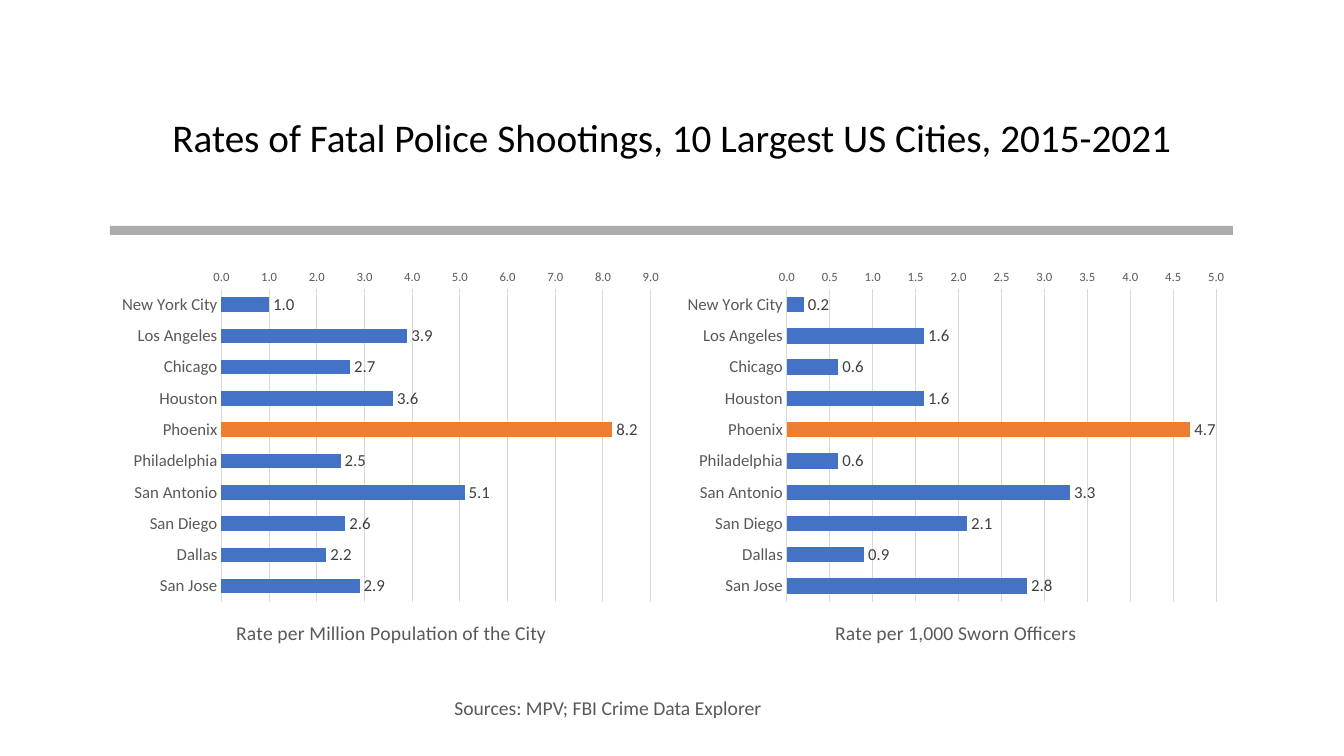
import lxml.etree
import pptx
import pptx.chart.data
import pptx.dml.color
import pptx.enum.chart
import pptx.enum.shapes
import pptx.enum.text
import pptx.oxml.ns
import pptx.util

CITIES = ["New York City", "Los Angeles", "Chicago", "Houston", "Phoenix",
          "Philadelphia", "San Antonio", "San Diego", "Dallas", "San Jose"]
HIGHLIGHTED_CITY = CITIES.index("Phoenix")
POPULATION_RATES = [1.0, 3.9, 2.7, 3.6, 8.2, 2.5, 5.1, 2.6, 2.2, 2.9]
OFFICER_RATES = [0.2, 1.6, 0.6, 1.6, 4.7, 0.6, 3.3, 2.1, 0.9, 2.8]


def color(value):
    return pptx.dml.color.RGBColor.from_string(value)


def lengths(frame):
    return [pptx.util.Cm(value) for value in frame]


def add_element(parent, tag, value):
    element = lxml.etree.SubElement(parent, pptx.oxml.ns.qn(tag))
    element.set("val", str(value))


def set_layout(parent, index, settings):
    for old in parent.findall(pptx.oxml.ns.qn("c:layout")):
        parent.remove(old)
    layout = lxml.etree.Element(pptx.oxml.ns.qn("c:layout"))
    manual = lxml.etree.SubElement(layout, pptx.oxml.ns.qn("c:manualLayout"))
    for name, value in settings.items():
        add_element(manual, f"c:{name}", value)
    parent.insert(index, layout)


class RateSlide:
    font = "Calibri"
    gray = "595959"
    grid = "D9D9D9"
    bar = "4472C4"
    highlight = "ED7D31"

    def __init__(self, deck):
        self.page = deck.slides.add_slide(deck.slide_layouts[6])

    def style(self, font, size, value):
        font.name = self.font
        font.size = pptx.util.Pt(size)
        font.bold = False
        font.color.rgb = color(value)

    def line(self, line):
        line.color.rgb = color(self.grid)
        line.width = pptx.util.Pt(0.75)

    def rule(self, frame, value, opacity):
        shape = self.page.shapes.add_shape(
            pptx.enum.shapes.MSO_SHAPE.RECTANGLE, *lengths(frame))
        shape.shadow.inherit = False
        shape.fill.solid()
        shape.fill.fore_color.rgb = color(value)
        shape.line.fill.background()
        fill = shape.element.spPr.find(pptx.oxml.ns.qn("a:solidFill"))
        add_element(fill[0], "a:alpha", opacity * 1000)

    def text(self, frame, text, size, value, wrap=False, centered=False):
        box = self.page.shapes.add_textbox(*lengths(frame))
        box.text_frame.word_wrap = wrap
        para = box.text_frame.paragraphs[0]
        if centered:
            box.text_frame.vertical_anchor = pptx.enum.text.MSO_ANCHOR.MIDDLE
            para.alignment = pptx.enum.text.PP_ALIGN.CENTER
            para.line_spacing = 0.9
        else:
            box.text_frame.auto_size = pptx.enum.text.MSO_AUTO_SIZE.SHAPE_TO_FIT_TEXT
        span = para.add_run()
        span.text = text
        self.style(span.font, size, value)

    def chart(self, frame, caption, caption_left, rates, gap, maximum, step):
        data = pptx.chart.data.CategoryChartData()
        data.categories = CITIES
        data.add_series("Series 1", rates)
        chart = self.page.shapes.add_chart(
            pptx.enum.chart.XL_CHART_TYPE.BAR_CLUSTERED, *lengths(frame), data).chart
        chart.has_legend = False
        chart.has_title = False
        self.style(chart.font, 10, "000000")
        area = chart.element.xpath("c:chart/c:plotArea")[0]
        set_layout(area, 0, {"layoutTarget": "inner", "xMode": "edge", "yMode": "edge",
                             "x": 0.2, "y": 0.065, "w": 0.77, "h": 0.786})
        self.bars(chart.plots[0], gap)
        self.city_axis(chart.category_axis)
        self.rate_axis(chart.value_axis, caption, caption_left, maximum, step)

    def bars(self, plot, gap):
        plot.gap_width = gap
        plot.vary_by_categories = False
        series = plot.series[0]
        point = series.points[HIGHLIGHTED_CITY]
        for item, value in ((series, self.bar), (point, self.highlight)):
            item.format.fill.solid()
            item.format.fill.fore_color.rgb = color(value)
        labels = series.data_labels
        labels.show_value = True
        labels.position = pptx.enum.chart.XL_LABEL_POSITION.OUTSIDE_END
        labels.number_format = "#,##0.0"
        labels.number_format_is_linked = False
        self.style(labels.font, 12, "404040")

    def city_axis(self, axis):
        axis.reverse_order = True
        axis.has_major_gridlines = False
        axis.major_tick_mark = pptx.enum.chart.XL_TICK_MARK.NONE
        self.line(axis.format.line)
        self.style(axis.tick_labels.font, 12, self.gray)

    def rate_axis(self, axis, caption, caption_left, maximum, step):
        axis.minimum_scale = 0
        axis.maximum_scale = maximum
        axis.major_unit = step
        axis.major_tick_mark = pptx.enum.chart.XL_TICK_MARK.NONE
        axis.format.line.fill.background()
        axis.has_major_gridlines = True
        self.line(axis.major_gridlines.format.line)
        axis.tick_labels.number_format = "0.0"
        axis.tick_labels.number_format_is_linked = False
        self.style(axis.tick_labels.font, 9, self.gray)
        axis.has_title = True
        span = axis.axis_title.text_frame.paragraphs[0].add_run()
        span.text = caption
        self.style(span.font, 14, self.gray)
        set_layout(axis.axis_title.element, 1,
                   {"xMode": "edge", "yMode": "edge", "x": caption_left, "y": 0.885})


def main():
    deck = pptx.Presentation()
    deck.slide_width = pptx.util.Cm(33.87)
    deck.slide_height = pptx.util.Cm(19.05)
    slide = RateSlide(deck)
    slide.rule((2.77, 5.69, 28.3, 0.23), "808080", 65)
    slide.chart((2.77, 6.63, 14.05, 10.03), "Rate per Million Population of the City",
                0.22, POPULATION_RATES, 115, 9, 1)
    slide.chart((17.02, 6.63, 14.05, 10.03), "Rate per 1,000 Sworn Officers",
                0.28, OFFICER_RATES, 104, 5, 0.5)
    slide.text((2.41, 1.68, 29.03, 3.68),
               "Rates of Fatal Police Shootings, 10 Largest US Cities, 2015-2021",
               28, "000000", wrap=True, centered=True)
    slide.text((11.2, 17.4, 8.33, 0.86), "Sources: MPV; FBI Crime Data Explorer",
               14, slide.gray)
    deck.save("out.pptx")


if __name__ == "__main__":
    main()
